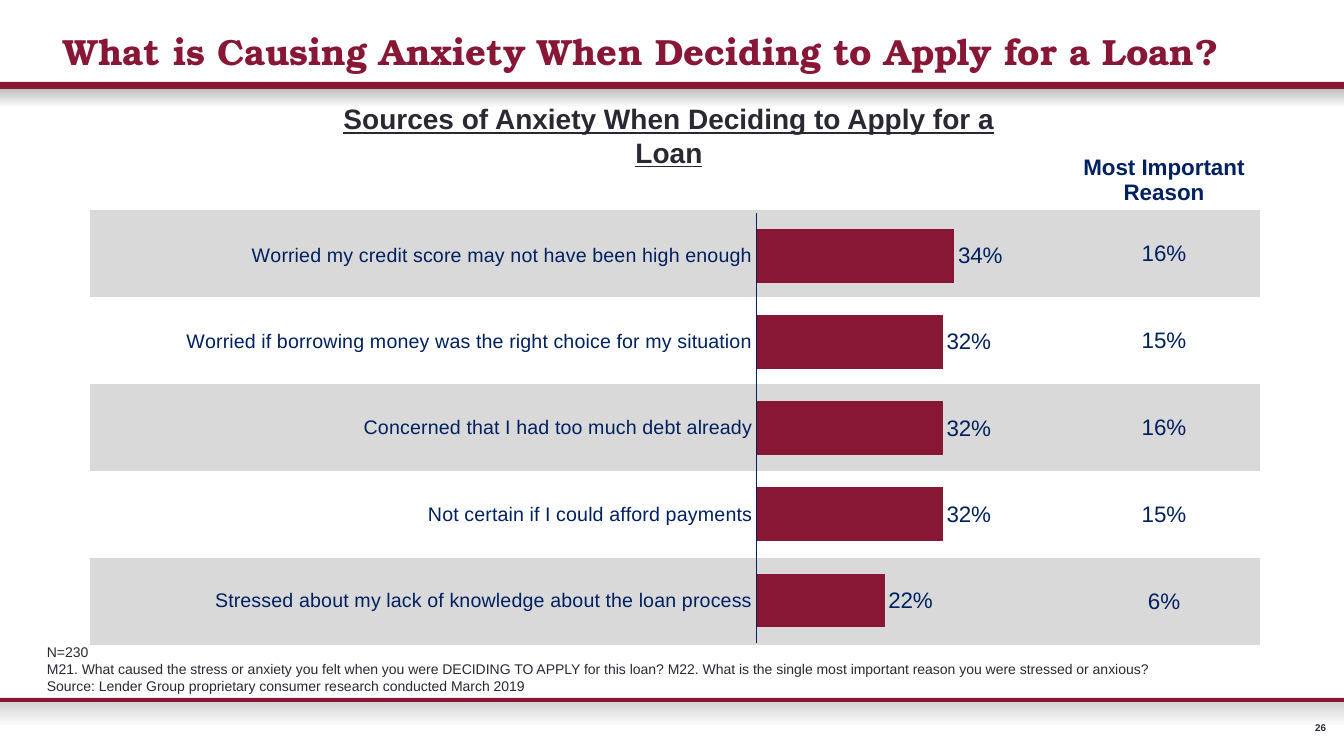
from dataclasses import dataclass

import pptx
import pptx.chart.data
import pptx.dml.color
import pptx.enum.chart
import pptx.enum.shapes
import pptx.enum.text
import pptx.oxml
import pptx.oxml.ns
import pptx.util

EMU_PER_PX = 914400 / 100.8
MAROON, NAVY, INK, BAND = "881635", "002060", "292934", "D9D9D9"
CENTER = pptx.enum.text.PP_ALIGN.CENTER
RIGHT = pptx.enum.text.PP_ALIGN.RIGHT
TOP = pptx.enum.text.MSO_ANCHOR.TOP
MIDDLE = pptx.enum.text.MSO_ANCHOR.MIDDLE
BOTTOM = pptx.enum.text.MSO_ANCHOR.BOTTOM
NO_GRID_STYLE = "{2D5ABB26-0587-4C30-8999-92F81FD0307C}"


@dataclass
class Box:
    left: int
    top: int
    width: int
    height: int

    def emu(self) -> list[int]:
        return [px(n) for n in (self.left, self.top, self.width, self.height)]


@dataclass
class Stripe:
    box: Box
    color: str
    fade_to: str = ""


@dataclass
class Caption:
    box: Box
    lines: list[str]
    size: float
    color: str = INK
    font: str = "Arial"
    bold: bool = False
    underline: bool = False
    align: pptx.enum.text.PP_ALIGN | None = None
    anchor: pptx.enum.text.MSO_ANCHOR = TOP
    wrap: bool = True
    inset: bool = True


@dataclass
class Reason:
    label: str
    share: float
    most_important: str


STRIPES = [
    Stripe(Box(0, 700, 1344, 27), "CFCFCF", "FFFFFF"),
    Stripe(Box(0, 89, 1344, 19), "C0C0C0", "FFFFFF"),
    Stripe(Box(0, 698, 1344, 4), MAROON),
    Stripe(Box(0, 82, 1344, 7), MAROON),
]
CAPTIONS = [
    Caption(Box(1314, 722, 12, 12), ["26"], 7, bold=True, align=RIGHT,
            anchor=MIDDLE, wrap=False, inset=False),
    Caption(Box(54, 24, 1210, 54),
            ["What is Causing Anxiety When Deciding to Apply for a Loan?"],
            26, MAROON, "TeX Gyre Bonum", bold=True, anchor=MIDDLE),
    Caption(Box(37, 639, 1139, 78), [
        "N=230",
        "M21. What caused the stress or anxiety you felt when you were DECIDING TO APPLY for this loan? "
        "M22. What is the single most important reason you were stressed or anxious?",
        "Source: Lender Group proprietary consumer research conducted March 2019",
    ], 10),
    Caption(Box(297, 97, 744, 44),
            ["Sources of Anxiety When Deciding to Apply for a Loan"],
            20, bold=True, underline=True, align=CENTER, wrap=False),
]
REASONS = [
    Reason("Worried my credit score may not have been high enough", 0.34, "16%"),
    Reason("Worried if borrowing money was the right choice for my situation", 0.32, "15%"),
    Reason("Concerned that I had too much debt already", 0.32, "16%"),
    Reason("Not certain if I could afford payments", 0.32, "15%"),
    Reason("Stressed about my lack of knowledge about the loan process", 0.22, "6%"),
]


def px(n: int) -> int:
    return round(n * EMU_PER_PX)


def rgb(color: str) -> pptx.dml.color.RGBColor:
    return pptx.dml.color.RGBColor.from_string(color)


def set_font(font, size: float, color: str, name: str = "Arial", bold: bool = False) -> None:
    font.size = pptx.util.Pt(size)
    font.color.rgb = rgb(color)
    font.name = name
    font.bold = bold


def draw_stripe(slide, stripe: Stripe) -> None:
    bar = slide.shapes.add_shape(pptx.enum.shapes.MSO_SHAPE.RECTANGLE, *stripe.box.emu())
    bar.shadow.inherit = False
    bar.line.fill.background()
    if stripe.fade_to:
        bar.fill.gradient()
        bar.fill.gradient_angle = 270
        for stop, color in zip(bar.fill.gradient_stops, (stripe.color, stripe.fade_to)):
            stop.color.rgb = rgb(color)
    else:
        bar.fill.solid()
        bar.fill.fore_color.rgb = rgb(stripe.color)


def draw_caption(slide, caption: Caption) -> None:
    frame = slide.shapes.add_textbox(*caption.box.emu()).text_frame
    frame.word_wrap = caption.wrap
    frame.vertical_anchor = caption.anchor
    if not caption.inset:
        frame.margin_left = frame.margin_right = frame.margin_top = frame.margin_bottom = 0
    frame.text = "\n".join(caption.lines)
    for paragraph in frame.paragraphs:
        paragraph.alignment = caption.align
        set_font(paragraph.font, caption.size, caption.color, caption.font, caption.bold)
        paragraph.font.underline = caption.underline


def draw_ranking_table(slide, box: Box) -> None:
    frame = slide.shapes.add_table(len(REASONS) + 1, 2, *box.emu())
    table = frame.table
    table.first_row = table.horz_banding = False
    table._tbl.tblPr.find(pptx.oxml.ns.qn("a:tableStyleId")).text = NO_GRID_STYLE
    table.columns[0].width, table.columns[1].width = px(978), px(192)
    entries = ["Most Important Reason"] + [reason.most_important for reason in REASONS]
    for row, entry in enumerate(entries):
        table.rows[row].height = px(87 if row else 115)
        for cell in table.rows[row].cells:
            if row % 2:
                cell.fill.solid()
                cell.fill.fore_color.rgb = rgb(BAND)
            else:
                cell.fill.background()
        answer = table.cell(row, 1)
        answer.text = entry
        answer.vertical_anchor = MIDDLE if row else BOTTOM
        if row:
            answer.margin_left = answer.margin_right = answer.margin_top = answer.margin_bottom = 0
        paragraph = answer.text_frame.paragraphs[0]
        paragraph.alignment = CENTER
        set_font(paragraph.font, 16, NAVY, bold=row == 0)


def draw_reason_chart(slide, box: Box) -> None:
    data = pptx.chart.data.CategoryChartData(number_format="0%")
    data.categories = [reason.label for reason in REASONS]
    data.add_series("Series 1", [reason.share for reason in REASONS])
    chart = slide.shapes.add_chart(
        pptx.enum.chart.XL_CHART_TYPE.BAR_CLUSTERED, *box.emu(), data).chart
    chart.has_title = chart.has_legend = False
    set_font(chart.font, 10, INK)

    reasons_axis = chart.category_axis
    reasons_axis.reverse_order = True
    reasons_axis.major_tick_mark = pptx.enum.chart.XL_TICK_MARK.NONE
    reasons_axis.minor_tick_mark = pptx.enum.chart.XL_TICK_MARK.NONE
    reasons_axis.format.line.color.rgb = rgb(NAVY)
    reasons_axis.format.line.width = pptx.util.Pt(0.75)
    set_font(reasons_axis.tick_labels.font, 14, NAVY)
    share_axis = chart.value_axis
    share_axis.minimum_scale, share_axis.maximum_scale = 0, 0.4
    share_axis.has_major_gridlines = False
    share_axis.visible = False

    bars = chart.plots[0]
    bars.gap_width = 60
    bars.vary_by_categories = False
    shares = bars.series[0]
    shares.invert_if_negative = False
    shares.format.fill.solid()
    shares.format.fill.fore_color.rgb = rgb(MAROON)
    labels = shares.data_labels
    labels.show_value = True
    labels.number_format, labels.number_format_is_linked = "0%", False
    labels.position = pptx.enum.chart.XL_LABEL_POSITION.OUTSIDE_END
    set_font(labels.font, 16, NAVY)
    place_plot(chart, {"x": 0.511, "y": 0.081, "w": 0.178, "h": 0.919})


def place_plot(chart, fractions: dict[str, float]) -> None:
    qn, nsdecls = pptx.oxml.ns.qn, pptx.oxml.ns.nsdecls
    modes = "".join(f'<c:{side}Mode val="edge"/>' for side in "xy")
    sizes = "".join(f'<c:{side} val="{part}"/>' for side, part in fractions.items())
    plot_area = chart._chartSpace.chart.plotArea
    for layout in plot_area.findall(qn("c:layout")):
        plot_area.remove(layout)
    plot_area.insert(0, pptx.oxml.parse_xml(
        f'<c:layout {nsdecls("c")}><c:manualLayout><c:layoutTarget val="inner"/>'
        f'{modes}{sizes}</c:manualLayout></c:layout>'))
    no_fill = f'<c:spPr {nsdecls("c", "a")}><a:noFill/><a:ln><a:noFill/></a:ln></c:spPr>'
    plot_area.append(pptx.oxml.parse_xml(no_fill))
    chart._chartSpace.chart.addnext(pptx.oxml.parse_xml(no_fill))


def main() -> None:
    deck = pptx.Presentation()
    deck.slide_width, deck.slide_height = px(1344), px(756)
    slide = deck.slides.add_slide(deck.slide_layouts[6])
    for stripe in STRIPES:
        draw_stripe(slide, stripe)
    draw_ranking_table(slide, Box(90, 95, 1170, 550))
    draw_reason_chart(slide, Box(90, 175, 1305, 469))
    for caption in CAPTIONS:
        draw_caption(slide, caption)
    deck.save("out.pptx")


if __name__ == "__main__":
    main()
